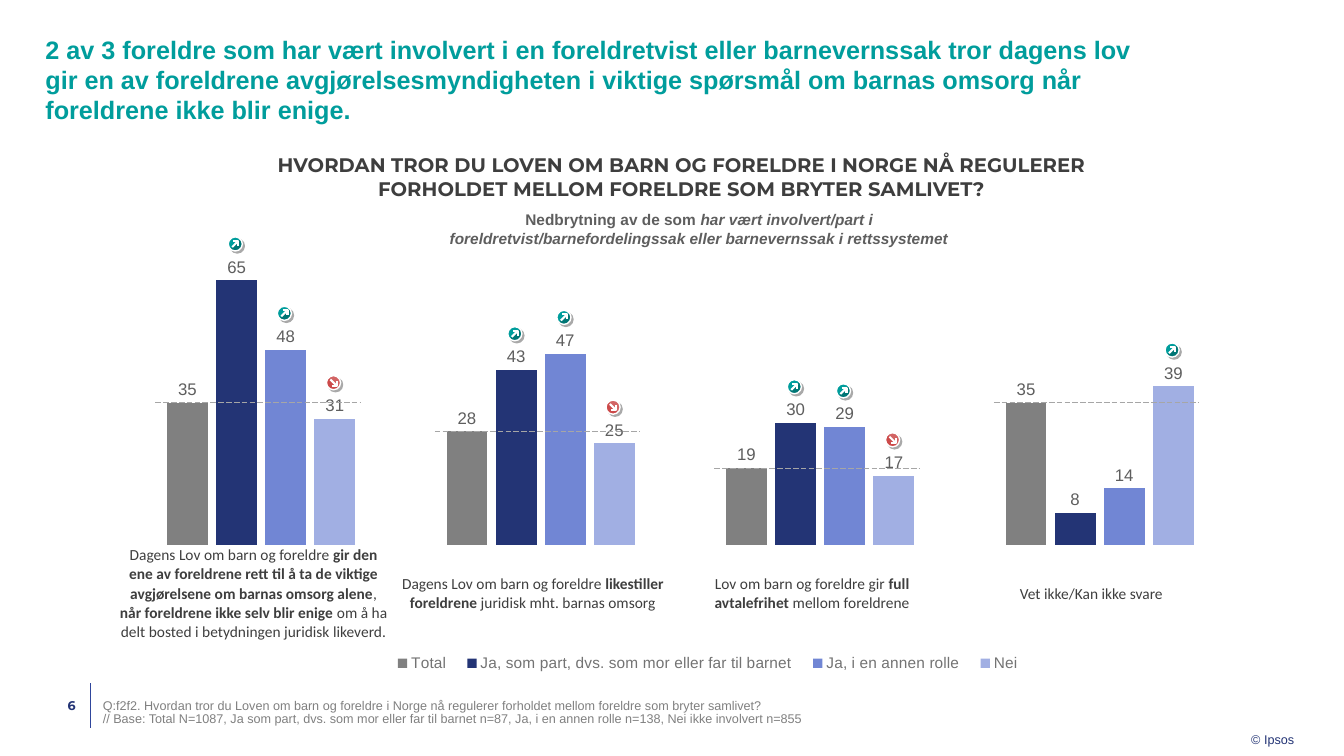
from lxml import etree
from pptx import Presentation
from pptx import util as u
from pptx.chart.data import CategoryChartData
from pptx.dml.color import RGBColor
from pptx.enum import chart as charts
from pptx.enum import dml, shapes, text
from pptx.oxml import parse_xml
from pptx.oxml.ns import nsdecls, qn

COLORS = {
    "teal": "009D9C", "dark teal": "007675", "red": "D26464", "dark red": "CC4A4A",
    "navy": "233475", "rule": "2F469C", "blue": "7186D4", "pale blue": "A1AFE3",
    "grey": "808080", "legend": "737373", "label": "5E5E5E", "heading": "3E3E3E",
    "dash": "A6A6A6", "ink": "282828", "white": "FFFFFF",
}
SERIES = [
    ("Total", "grey", (35, 28, 19, 35)),
    ("Ja, som part, dvs. som mor eller far til barnet", "navy", (65, 43, 30, 8)),
    ("Ja, i en annen rolle", "blue", (48, 47, 29, 14)),
    ("Nei", "pale blue", (31, 25, 17, 39)),
]
# Series that differ significantly from the total, for each answer
SIGNIFICANT = [(1, 2, 3), (1, 2, 3), (1, 2, 3), (3,)]
# Plain and bold pieces alternate
ANSWERS = [
    ["Dagens Lov om barn og foreldre ",
     "gir den ene av foreldrene rett til å ta de viktige avgjørelsene om barnas omsorg alene",
     ", ", "når foreldrene ikke selv blir enige ",
     "om å ha delt bosted i betydningen juridisk likeverd."],
    ["Dagens Lov om barn og foreldre ", "likestiller foreldrene ",
     "juridisk mht. barnas omsorg"],
    ["Lov om barn og foreldre gir ", "full avtalefrihet ", "mellom foreldrene"],
    ["Vet ikke/Kan ikke svare"],
]
# Frames are left, top, width, height on a grid of 100 columns and 100 rows
CHART = (7.65, 28.13, 86.57, 63.07)
PLOT_SHARE = (0.016, 0.099, 0.961, 0.599)
LEGEND_SHARE = (0.24, 0.915, 0.56, 0.06)
PLOT = (CHART[0] + PLOT_SHARE[0] * CHART[2], CHART[1] + PLOT_SHARE[1] * CHART[3],
        PLOT_SHARE[2] * CHART[2], PLOT_SHARE[3] * CHART[3])
AXIS_MAX, GAP, OVERLAP = 70, 223, -20
BADGE = (1.05, 1.87)
CENTER, RIGHT = text.PP_ALIGN.CENTER, text.PP_ALIGN.RIGHT
MIDDLE, BOTTOM = text.MSO_ANCHOR.MIDDLE, text.MSO_ANCHOR.BOTTOM


def rgb(name):
    return RGBColor.from_string(COLORS[name])


def style_font(font, size, color, name="Arial"):
    font.size, font.name = u.Pt(size), name
    font.color.rgb = rgb(color)


def set_layout(element, share, inner=False):
    """Pin a plot area or legend to shares of the chart's size."""
    for old in element.findall(qn("c:layout")):
        element.remove(old)
    target = '<c:layoutTarget val="inner"/>' if inner else ""
    modes = "".join(f'<c:{edge}Mode val="edge"/>' for edge in "xy")
    values = "".join(f'<c:{key} val="{value}"/>' for key, value in zip("xywh", share))
    layout = parse_xml(f'<c:layout {nsdecls("c")}><c:manualLayout>{target}{modes}{values}'
                       '</c:manualLayout></c:layout>')
    position = element.find(qn("c:legendPos"))
    element.insert(0 if position is None else 1, layout)


def value_row(value):
    return PLOT[1] + PLOT[3] * (1 - value / AXIS_MAX)


def bar_column(series, answer):
    """Centre of a bar, from the chart's gap width and overlap."""
    step, gap = 1 - OVERLAP / 100, GAP / 100
    units = 1 + step * (len(SERIES) - 1) + gap
    return PLOT[0] + PLOT[2] / len(ANSWERS) * (answer + (gap / 2 + 0.5 + step * series) / units)


class SlideBuilder:
    def __init__(self, presentation):
        self.width, self.height = presentation.slide_width, presentation.slide_height
        self.slide = presentation.slides.add_slide(presentation.slide_layouts[5])
        self.shapes = self.slide.shapes

    def x(self, columns):
        return u.Emu(round(self.width * columns / 100))

    def y(self, rows):
        return u.Emu(round(self.height * rows / 100))

    def box(self, frame):
        left, top, width, height = frame
        return self.x(left), self.y(top), self.x(width), self.y(height)

    def fill_text(self, frame, pieces, size, color, font="Arial", align=None, bold=False,
                  emphasis=None):
        """Fill a text frame; every second piece gets the emphasis."""
        paragraph = frame.paragraphs[0]
        paragraph.text = pieces[0]
        for piece in pieces[1:]:
            paragraph.add_run().text = piece
        paragraph.alignment = align
        for index, run in enumerate(paragraph.runs):
            style_font(run.font, size, color, font)
            run.font.bold = bold
            if emphasis and index % 2:
                setattr(run.font, emphasis, True)
        return paragraph

    def fit(self, frame, margins, anchor):
        frame.word_wrap, frame.auto_size = True, text.MSO_AUTO_SIZE.NONE
        frame.vertical_anchor = anchor
        (frame.margin_left, frame.margin_top,
         frame.margin_right, frame.margin_bottom) = (u.Inches(m) for m in margins)

    def title(self, frame, wording, size, color):
        title = self.shapes.title
        title.left, title.top, title.width, title.height = self.box(frame)
        self.fit(title.text_frame, (0, 0.04, 0, 0.04), BOTTOM)
        paragraph = self.fill_text(title.text_frame, [wording], size, color,
                                   align=text.PP_ALIGN.LEFT, bold=True)
        paragraph.line_spacing = 1.0

    def text(self, frame, pieces, size, color, margins=(0, 0, 0, 0),
             anchor=text.MSO_ANCHOR.TOP, **style):
        text_frame = self.shapes.add_textbox(*self.box(frame)).text_frame
        self.fit(text_frame, margins, anchor)
        return self.fill_text(text_frame, pieces, size, color, **style)

    def line(self, start, end, color, width, dash=None, parent=None):
        line = (parent or self.slide).shapes.add_connector(
            shapes.MSO_CONNECTOR.STRAIGHT, self.x(start[0]), self.y(start[1]),
            self.x(end[0]), self.y(end[1]))
        line.line.color.rgb, line.line.width = rgb(color), u.Pt(width)
        if dash:
            line.line.dash_style = dash
        etree.SubElement(line._element.spPr, qn("a:effectLst"))

    def bar_chart(self, frame):
        data = CategoryChartData(number_format="0")
        data.categories = [str(number + 1) for number in range(len(ANSWERS))]
        for name, _, values in SERIES:
            data.add_series(name, values)
        chart = self.shapes.add_chart(charts.XL_CHART_TYPE.COLUMN_CLUSTERED,
                                      *self.box(frame), data).chart
        style_font(chart.font, 10, "ink")
        chart.has_title = False
        chart.has_legend = True
        chart.legend.position = charts.XL_LEGEND_POSITION.BOTTOM
        chart.legend.include_in_layout = False
        style_font(chart.legend.font, 11, "legend")
        chart.value_axis.minimum_scale, chart.value_axis.maximum_scale = 0, AXIS_MAX
        chart.value_axis.has_major_gridlines = False
        chart.value_axis.visible = chart.category_axis.visible = False
        plot = chart.plots[0]
        plot.gap_width, plot.overlap, plot.vary_by_categories = GAP, OVERLAP, False
        for series, (_, color, _) in zip(plot.series, SERIES):
            series.format.fill.solid()
            series.format.fill.fore_color.rgb = rgb(color)
            labels = series.data_labels
            labels.show_value = True
            labels.number_format, labels.number_format_is_linked = "0", False
            labels.position = charts.XL_LABEL_POSITION.OUTSIDE_END
            style_font(labels.font, 12, "label")
        set_layout(chart._chartSpace.chart.plotArea, PLOT_SHARE, inner=True)
        set_layout(chart.legend._element, LEGEND_SHARE)

    def answer_table(self, frame):
        table = self.shapes.add_table(1, len(ANSWERS), *self.box(frame)).table
        table.first_row = table.horz_banding = False
        no_style = "{2D5ABB26-0587-4C30-8999-92F81FD0307C}"
        table._tbl.tblPr.find(qn("a:tableStyleId")).text = no_style
        for cell, pieces in zip(table.rows[0].cells, ANSWERS):
            cell.fill.background()
            cell.vertical_anchor = MIDDLE
            cell.margin_left = cell.margin_right = u.Inches(0.05)
            cell.margin_top = cell.margin_bottom = u.Inches(0.05)
            self.fill_text(cell.text_frame, pieces, 11, "heading", "Calibri", CENTER,
                           emphasis="bold")

    def badge(self, column, row, rising):
        """Round mark whose arrow points up or down to the right."""
        width, height = BADGE
        group = self.shapes.add_group_shape()
        disc = group.shapes.add_shape(
            shapes.MSO_SHAPE.OVAL,
            *self.box((column - width / 2, row - height / 2, width, height)))
        disc.rotation = 0 if rising else 90
        disc.fill.gradient()
        disc.fill.gradient_angle = 315
        hue = "teal" if rising else "red"
        for stop, color in zip(disc.fill.gradient_stops, (hue, "dark " + hue)):
            stop.position, stop.color.rgb = 0.5, rgb(color)
        disc.line.color.rgb, disc.line.width = rgb("white"), u.Pt(1)
        disc._element.spPr.append(parse_xml(
            f'<a:effectLst {nsdecls("a")}><a:outerShdw blurRad="0" dist="25400" dir="2700000">'
            f'<a:srgbClr val="{COLORS["ink"]}"><a:alpha val="40000"/></a:srgbClr>'
            '</a:outerShdw></a:effectLst>'))
        up = -1 if rising else 1

        def point(across, along):
            return column + across * width, row + up * along * height

        self.line(point(0.22, 0.22), point(-0.22, -0.22), "white", 1.5, parent=group)
        corners = [(self.x(c), self.y(r)) for c, r in
                   (point(-0.13, 0.22), point(0.22, 0.22), point(0.22, -0.13))]
        builder = group.shapes.build_freeform(*corners[0])
        builder.add_line_segments(corners[1:], close=False)
        head = builder.convert_to_shape()
        head.shadow.inherit = False
        head.fill.background()
        head.line.color.rgb, head.line.width = rgb("white"), u.Pt(1.5)


def main():
    presentation = Presentation()
    presentation.slide_width, presentation.slide_height = u.Inches(13.33), u.Inches(7.5)
    page = SlideBuilder(presentation)
    page.title((3.38, 4.4, 83.12, 12.67),
               "2 av 3 foreldre som har vært involvert i en foreldretvist eller barnevernssak "
               "tror dagens lov gir en av foreldrene avgjørelsesmyndigheten i viktige spørsmål "
               "om barnas omsorg når foreldrene ikke blir enige.", 18, "teal")
    page.line((6.75, 90.4), (6.75, 96.27), "rule", 0.5)
    page.text((93.1, 96.27, 4.5, 2.53), ["© Ipsos"], 9, "navy", margins=(0, 0.04, 0, 0))
    page.bar_chart(CHART)
    page.text((3.38, 90.4, 3.38, 5.73), ["6"], 9, "navy", margins=(0, 0, 0.15, 0),
              anchor=MIDDLE, font="Montserrat", align=RIGHT, bold=True)
    footnote = page.text(
        (7.65, 92.53, 83.12, 3.6),
        ["Q:f2f2. Hvordan tror du Loven om barn og foreldre i Norge nå regulerer forholdet "
         "mellom foreldre som bryter samlivet?\v// Base: Total N=1087, Ja som part, dvs. som "
         "mor eller far til barnet n=87, Ja, i en annen rolle n=138, Nei ikke involvert n=855"],
        9, "grey", anchor=BOTTOM)
    footnote.line_spacing = 0.9
    page.answer_table((8.48, 69.73, 83.12, 17.6))
    page.text((20.03, 20.27, 61.37, 6.27),
              ["HVORDAN TROR DU LOVEN OM BARN OG FORELDRE I NORGE NÅ REGULERER "
               "FORHOLDET MELLOM FORELDRE SOM BRYTER SAMLIVET?"],
              14, "heading", font="Montserrat", align=CENTER, bold=True)
    page.text((31.36, 27.2, 41.34, 6.27),
              ["Nedbrytning av de som ",
               "har vært involvert/part i foreldretvist/barnefordelingssak eller "
               "barnevernssak i rettssystemet"],
              11, "label", margins=(0.1, 0.05, 0.1, 0.05), align=CENTER, bold=True,
              emphasis="italic")
    for answer, total in enumerate(SERIES[0][2]):
        start, row = bar_column(0, answer) - 2.4, value_row(total)
        page.line((start, row), (start + 15.25, row), "dash", 0.5, dml.MSO_LINE.LONG_DASH)
        for series in SIGNIFICANT[answer]:
            value = SERIES[series][2][answer]
            page.badge(bar_column(series, answer) - 0.1, value_row(value) - 4.8, value > total)
    presentation.save("out.pptx")


if __name__ == "__main__":
    main()
